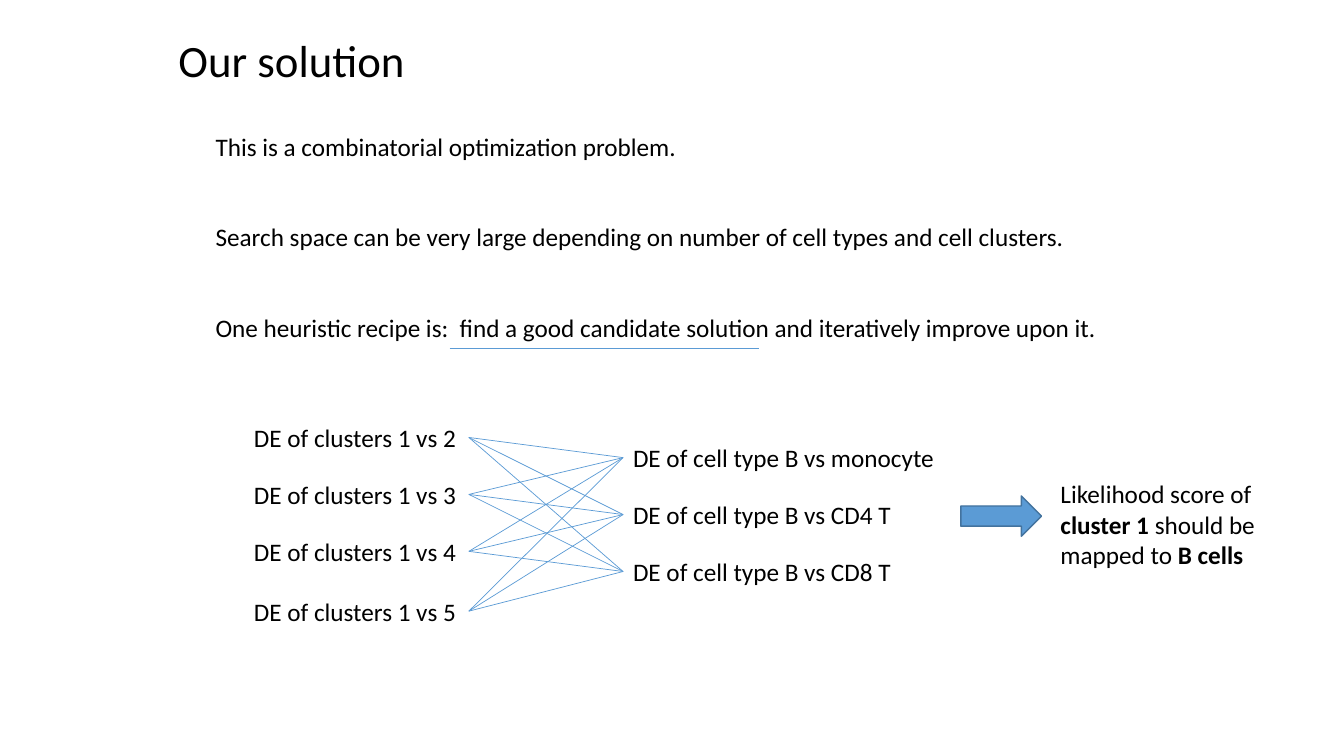
from itertools import product
from lxml.etree import SubElement
from pptx import Presentation
from pptx.dml.color import RGBColor
from pptx.enum.shapes import MSO_CONNECTOR, MSO_SHAPE
from pptx.enum.text import MSO_ANCHOR, MSO_AUTO_SIZE, PP_ALIGN
from pptx.oxml.ns import qn
from pptx.util import Inches, Pt

# Content
TITLE = "Our solution"
POINTS = [
    "This is a combinatorial optimization problem.",
    "Search space can be very large depending on number of cell types and cell clusters.",
    "One heuristic recipe is:  find a good candidate solution and iteratively improve upon it.",
]
# Label and its row in the diagram; the last cluster sits slightly lower
CLUSTERS = [("DE of clusters 1 vs 2", 0), ("DE of clusters 1 vs 3", 1),
            ("DE of clusters 1 vs 4", 2), ("DE of clusters 1 vs 5", 3.05)]
CELL_TYPES = [("DE of cell type B vs monocyte", 0), ("DE of cell type B vs CD4 T", 1),
              ("DE of cell type B vs CD8 T", 2)]
RESULT = [("Likelihood score of ", False), ("cluster 1 ", True),
          ("should be mapped to ", False), ("B cells", True)]

# Grid, in inches
CLUSTER_X, CLUSTER_W, CLUSTER_TOP = 2.42, 2.23, 4.14
TYPE_X, TYPE_W, TYPE_TOP = 6.18, 3.35, 4.34
ROW, LABEL_H = 0.565, 0.4
BLUE, DARK_BLUE, BLACK = "5B9BD5", "43739E", "000000"


def color(value):
    return RGBColor.from_string(value)


def add_text(p, text, size=18, bold=False, fill=BLACK):
    r = p.add_run()
    r.text = text
    r.font.name, r.font.size, r.font.bold = "Calibri", Pt(size), bold
    r.font.color.rgb = color(fill)


def add_box(s, x, y, w, h, paragraphs, wrap=True, gap=0):
    """Each paragraph is a list of (text, bold) runs."""
    tf = s.shapes.add_textbox(Inches(x), Inches(y), Inches(w), Inches(h)).text_frame
    tf.word_wrap = wrap
    for i, runs in enumerate(paragraphs):
        p = tf.add_paragraph() if i else tf.paragraphs[0]
        p.space_before = Pt(gap if i else 0)
        for text, bold in runs:
            add_text(p, text, bold=bold)


def add_line(s, x1, y1, x2, y2):
    line = s.shapes.add_connector(MSO_CONNECTOR.STRAIGHT, *map(Inches, (x1, y1, x2, y2)))
    line.line.color.rgb, line.line.width = color(BLUE), Pt(0.5)
    SubElement(line._element.spPr, qn("a:effectLst"))


def add_labels(s, labels, x, top, w):
    """Place the labels and return the heights of their middles."""
    tops = [top + row * ROW for _, row in labels]
    for (text, _), y in zip(labels, tops):
        add_box(s, x, y, w, LABEL_H, [[(text, False)]], wrap=False)
    return [y + LABEL_H / 2 for y in tops]


def main():
    prs = Presentation()
    prs.slide_width, prs.slide_height = Inches(13.33), Inches(7.5)
    s = prs.slides.add_slide(prs.slide_layouts[5])

    # Title
    title = s.shapes.title
    title.left, title.top, title.width, title.height = map(Inches, (1.67, 0, 10, 1.25))
    tf = title.text_frame
    tf.auto_size, tf.vertical_anchor = MSO_AUTO_SIZE.NONE, MSO_ANCHOR.MIDDLE
    p = tf.paragraphs[0]
    p.alignment, p.line_spacing = PP_ALIGN.LEFT, 0.9
    add_text(p, TITLE, size=32)

    # Points, with the key phrase underlined
    add_box(s, 2.04, 1.25, 10.26, 2.52, [[(text, False)] for text in POINTS], gap=43)
    add_line(s, 4.46, 3.46, 7.53, 3.46)

    # Every cluster comparison joined to every cell type comparison
    cluster_mids = add_labels(s, CLUSTERS, CLUSTER_X, CLUSTER_TOP, CLUSTER_W)
    type_mids = add_labels(s, CELL_TYPES, TYPE_X, TYPE_TOP, TYPE_W)
    for y1, y2 in product(cluster_mids, type_mids):
        add_line(s, CLUSTER_X + CLUSTER_W, y1, TYPE_X, y2)

    # Arrow to the result
    arrow = s.shapes.add_shape(MSO_SHAPE.RIGHT_ARROW, *map(Inches, (TYPE_X + TYPE_W, 4.92, 0.8, 0.4)))
    arrow.shadow.inherit = False
    arrow.fill.solid()
    arrow.fill.fore_color.rgb = color(BLUE)
    arrow.line.color.rgb, arrow.line.width = color(DARK_BLUE), Pt(1)
    add_box(s, 10.42, 4.7, 2.46, 1.01, [RESULT])

    prs.save("out.pptx")


if __name__ == "__main__":
    main()
